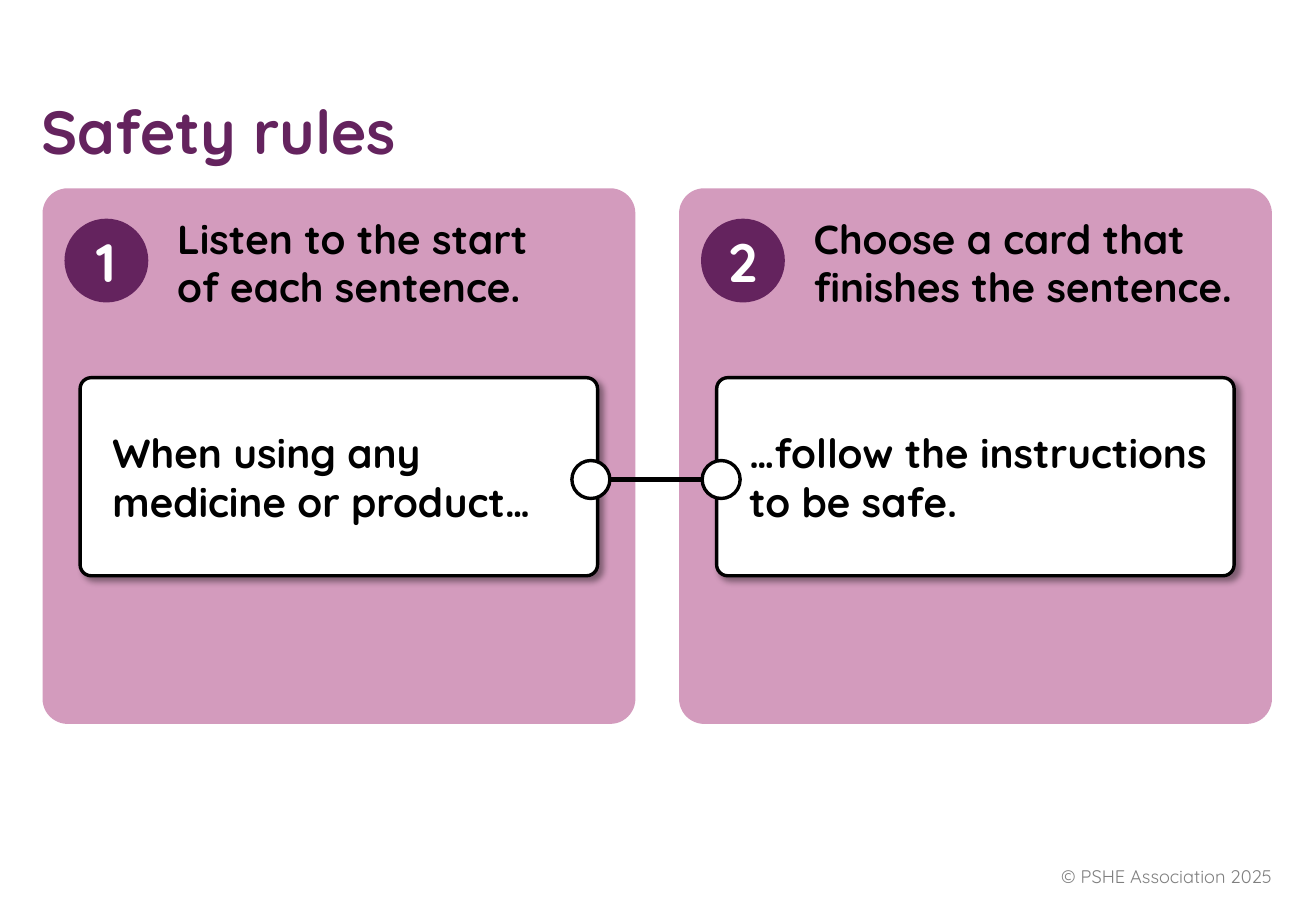
from lxml.etree import SubElement
from pptx import Presentation
from pptx.dml.color import RGBColor
from pptx.enum.shapes import MSO_CONNECTOR, MSO_SHAPE
from pptx.enum.text import MSO_ANCHOR, PP_ALIGN
from pptx.oxml import parse_xml
from pptx.oxml.ns import nsdecls, qn
from pptx.util import Pt

TITLE = "Safety rules"
CREDIT = "© PSHE Association 2025"
STEPS = [  # number, heading, heading width, card text
    ("1", "Listen to the start of each sentence.", 234,
     "When using any medicine or product…"),
    ("2", "Choose a card that finishes the sentence.", 268,
     "…follow the instructions to be safe."),
]

FONT = "Quicksand"
COLORS = {"panel": "D39BBD", "accent": "64235E", "ink": "000000",
          "paper": "FFFFFF", "credit": "7F7F7F"}

PANEL_X, PANEL_Y, PANEL_W, PANEL_H = 25.2, 111.6, 351.4, 317.5
PITCH = 377.3
CARD_DX, CARD_Y, CARD_W, CARD_H = 22.3, 223.9, 306.7, 117.4
BADGE_DX, BADGE_Y, BADGE = 13, 129.6, 49.7
HEAD_DX, HEAD_Y, HEAD_H = 72.7, 123.1, 65.5
DOT, DOT_XS = 22.5, (339, 416.2)
DOT_Y = 273

prs = Presentation()
prs.slide_width, prs.slide_height = Pt(780), Pt(540)
slide = prs.slides.add_slide(prs.slide_layouts[6])
shapes = slide.shapes


def color(name):
    return RGBColor.from_string(COLORS[name])


def write(shape, text, size, ink, bold=True, align=PP_ALIGN.LEFT,
          anchor=MSO_ANCHOR.MIDDLE, spacing=None):
    frame = shape.text_frame
    frame.word_wrap = True
    frame.vertical_anchor = anchor
    para = frame.paragraphs[0]
    para.alignment = align
    if spacing:
        para.line_spacing = spacing
    run = para.add_run()
    run.text = text
    run.font.name, run.font.size, run.font.bold = FONT, Pt(size), bold
    run.font.color.rgb = color(ink)


def add_text(x, y, w, h, *args, **style):
    box = shapes.add_textbox(Pt(x), Pt(y), Pt(w), Pt(h))
    write(box, *args, **style)


def add_block(kind, x, y, w, h, fill, outline=False, corner=None):
    block = shapes.add_shape(kind, Pt(x), Pt(y), Pt(w), Pt(h))
    block.shadow.inherit = False
    block.fill.solid()
    block.fill.fore_color.rgb = color(fill)
    if outline:
        block.line.color.rgb = color("ink")
        block.line.width = Pt(2)
    else:
        block.line.fill.background()
    if corner:
        block.adjustments[0] = corner
    return block


def drop_shadow(shape):
    """Cast a soft shadow down and to the right."""
    effects = shape._element.spPr.find(qn("a:effectLst"))
    effects.append(parse_xml(
        f'<a:outerShdw {nsdecls("a")} blurRad="{Pt(4)}" dist="{Pt(3)}" '
        f'dir="2700000" algn="tl" rotWithShape="0">'
        f'<a:srgbClr val="{COLORS["ink"]}"><a:alpha val="40000"/>'
        f'</a:srgbClr></a:outerShdw>'))


def add_step(index, number, heading, width, sentence):
    x = PANEL_X + index * PITCH
    add_block(MSO_SHAPE.ROUNDED_RECTANGLE, x, PANEL_Y, PANEL_W, PANEL_H,
              "panel", corner=0.047)
    card = add_block(MSO_SHAPE.ROUNDED_RECTANGLE, x + CARD_DX, CARD_Y,
                     CARD_W, CARD_H, "paper", outline=True, corner=0.056)
    drop_shadow(card)
    card.text_frame.margin_left = Pt(17.3)
    card.text_frame.margin_right = Pt(5.8)
    write(card, sentence, 24, "ink")
    add_text(x + HEAD_DX, HEAD_Y, width, HEAD_H, heading, 24, "ink",
             anchor=MSO_ANCHOR.TOP)
    badge = add_block(MSO_SHAPE.OVAL, x + BADGE_DX, BADGE_Y, BADGE, BADGE,
                      "accent")
    write(badge, number, 32, "paper", align=PP_ALIGN.CENTER)


add_text(17.3, 47.5, 610.6, 54.7, TITLE, 36, "accent",
         anchor=MSO_ANCHOR.BOTTOM, spacing=1.19)
add_text(585.4, 504.7, 175.7, 28.8, CREDIT, 10.8, "credit", bold=False,
         align=PP_ALIGN.RIGHT)

for index, step in enumerate(STEPS):
    add_step(index, *step)

for x in DOT_XS:
    add_block(MSO_SHAPE.OVAL, x, DOT_Y, DOT, DOT, "paper", outline=True)

mid = Pt(DOT_Y + DOT / 2)
link = shapes.add_connector(MSO_CONNECTOR.STRAIGHT, Pt(DOT_XS[0] + DOT), mid,
                            Pt(DOT_XS[1]), mid)
link.line.color.rgb = color("ink")
link.line.width = Pt(3)
SubElement(link._element.spPr, qn("a:effectLst"))

prs.save("out.pptx")
